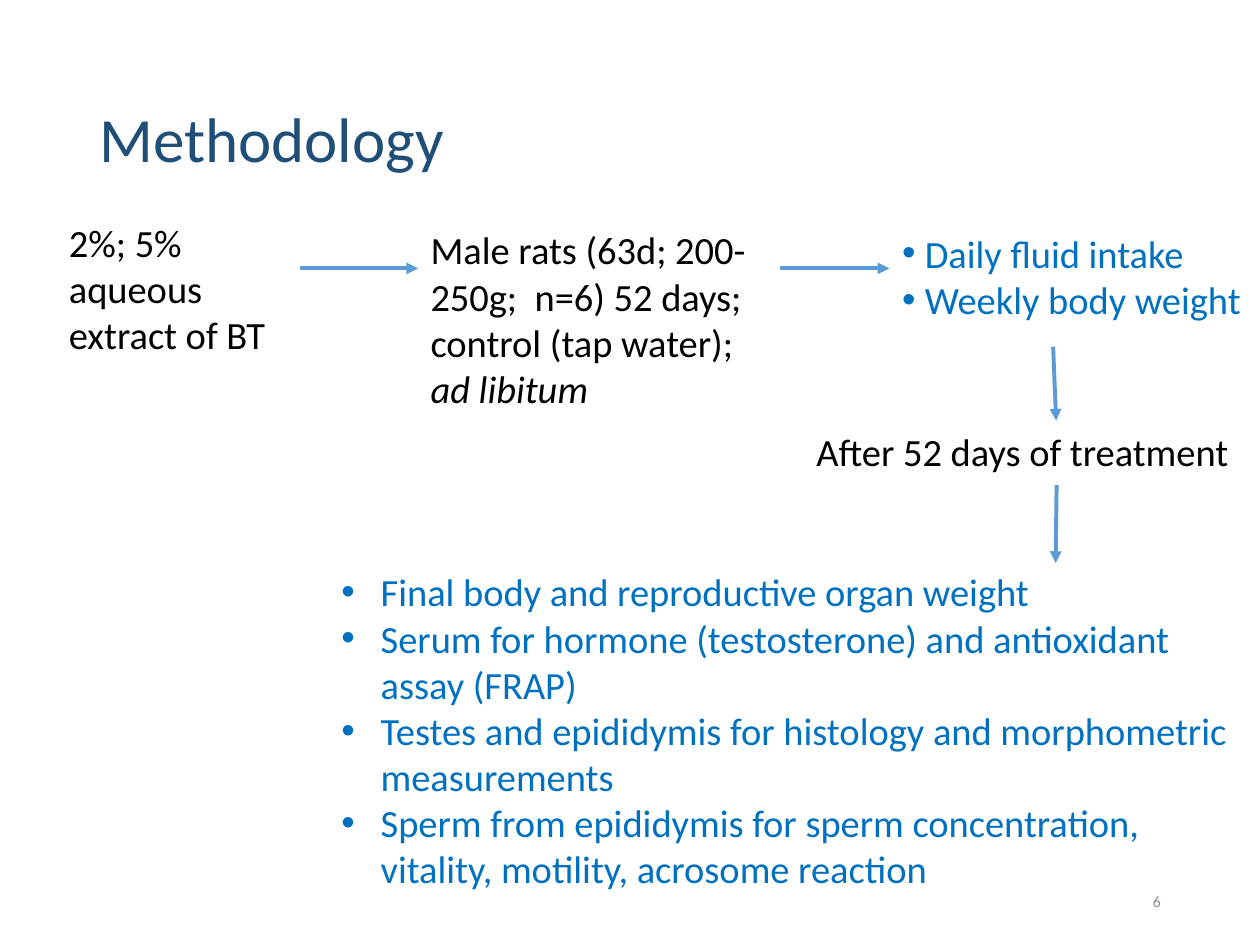
from collections import namedtuple
from dataclasses import dataclass

from lxml import etree
from pptx import Presentation
from pptx import util as u
from pptx.dml.color import RGBColor
from pptx.enum import shapes, text
from pptx.oxml import ns

Box = namedtuple("Box", "left top width height")


@dataclass(frozen=True)
class Theme:
    font: str = "Calibri"
    heading: str = "1F4E79"
    plain: str = "000000"
    measure: str = "0070C0"
    arrow: str = "5B9BD5"
    page: str = "8C8C8C"
    title_size: int = 36
    text_size: int = 22
    page_size: int = 9
    arrow_width: float = 2.25


THEME = Theme()


def place(shape, box):
    shape.left, shape.top, shape.width, shape.height = map(u.Cm, box)


def within(box, left, top, width, height):
    return Box(box.left + left, box.top + top, width, height)


def prepare(frame, anchor=text.MSO_ANCHOR.TOP):
    frame.word_wrap = True
    frame.auto_size = text.MSO_AUTO_SIZE.NONE
    frame.vertical_anchor = anchor


def add_run(paragraph, words, color, size=THEME.text_size, italic=False):
    run = paragraph.add_run()
    run.text = words
    run.font.name = THEME.font
    run.font.size = u.Pt(size)
    run.font.italic = italic
    run.font.color.rgb = RGBColor.from_string(color)


def add_note(slide, box, anchor=text.MSO_ANCHOR.TOP):
    note = slide.shapes.add_textbox(*map(u.Cm, box))
    prepare(note.text_frame, anchor)
    return note.text_frame.paragraphs[0]


def add_arrow(slide, box, start, end):
    points = (box.left + start[0], box.top + start[1], box.left + end[0], box.top + end[1])
    arrow = slide.shapes.add_connector(shapes.MSO_CONNECTOR.STRAIGHT, *map(u.Cm, points))
    arrow.line.color.rgb = RGBColor.from_string(THEME.arrow)
    arrow.line.width = u.Pt(THEME.arrow_width)
    etree.SubElement(arrow.line._get_or_add_ln(), ns.qn("a:tailEnd"), type="triangle")
    etree.SubElement(arrow._element.spPr, ns.qn("a:effectLst"))


def fill_list(holder, box, items, indent):
    place(holder, box)
    frame = holder.text_frame
    prepare(frame)
    for index, item in enumerate(items):
        paragraph = frame.add_paragraph() if index else frame.paragraphs[0]
        paragraph.space_before = paragraph.space_after = u.Pt(0)
        paragraph.line_spacing = 1.0
        paragraph.alignment = text.PP_ALIGN.LEFT
        props = paragraph._p.get_or_add_pPr()
        props.set("marL", str(u.Cm(indent)))
        props.set("indent", str(-u.Cm(indent)))
        etree.SubElement(props, ns.qn("a:buFont"), typeface="Arial")
        etree.SubElement(props, ns.qn("a:buChar"), char="•")
        add_run(paragraph, item, THEME.measure)


def build_title(slide, box):
    title = slide.shapes.title
    place(title, box)
    prepare(title.text_frame, text.MSO_ANCHOR.MIDDLE)
    heading = title.text_frame.paragraphs[0]
    heading.alignment = text.PP_ALIGN.LEFT
    heading.line_spacing = 0.9
    add_run(heading, "Methodology", THEME.heading, THEME.title_size)


def build_protocol(slide, box, monitoring):
    extract = add_note(slide, within(box, 0, 0, 5.08, 3.07))
    add_run(extract, "2%; 5% aqueous extract of BT", THEME.plain)

    rats = add_note(slide, within(box, 7.29, 0.15, 7.52, 4.01))
    add_run(rats, "Male rats (63d; 200-250g;  n=6) 52 days; control (tap water); ", THEME.plain)
    add_run(rats, "ad libitum", THEME.plain, italic=True)

    fill_list(monitoring, within(box, 16.79, 0.21, 8.81, 2.13),
              ["Daily fluid intake", "Weekly body weight"], 0.46)

    for start, end in [(4.91, 7.29), (14.58, 16.79)]:
        add_arrow(slide, box, (start, 1.12), (end, 1.12))


def build_treatment_end(slide, box):
    add_arrow(slide, box, (6.07, 0), (6.13, 1.49))
    milestone = add_note(slide, within(box, 0, 1.52, box.width, 1.19))
    milestone._p.get_or_add_pPr().set("marL", str(u.Cm(1.05)))
    add_run(milestone, "After 52 days of treatment", THEME.plain)
    add_arrow(slide, box, (6.14, 2.79), (6.12, 4.36))


def build_outcomes(outcomes, box):
    fill_list(outcomes, box, [
        "Final body and reproductive organ weight",
        "Serum for hormone (testosterone) and antioxidant assay (FRAP)",
        "Testes and epididymis for histology and morphometric measurements",
        "Sperm from epididymis for sperm concentration, vitality, motility, acrosome reaction",
    ], 0.79)


def build_page_number(slide, box):
    number = add_note(slide, box, text.MSO_ANCHOR.MIDDLE)
    number.alignment = text.PP_ALIGN.RIGHT
    add_run(number, "6", THEME.page, THEME.page_size)


def main():
    deck = Presentation()
    deck.slide_width, deck.slide_height = u.Cm(25.4), u.Cm(19.05)
    slide = deck.slides.add_slide(deck.slide_layouts.get_by_name("Two Content"))
    monitoring, outcomes = slide.placeholders[1], slide.placeholders[2]

    build_title(slide, Box(1.75, 1.02, 21.9, 3.68))
    build_protocol(slide, Box(1.14, 4.29, 25.6, 4.16), monitoring)
    build_treatment_end(slide, Box(15.16, 6.99, 10.44, 4.36))
    build_outcomes(outcomes, Box(6.63, 11.33, 18.95, 8.71))
    build_page_number(slide, Box(17.93, 17.65, 5.72, 1.02))
    deck.save("out.pptx")


if __name__ == "__main__":
    main()
